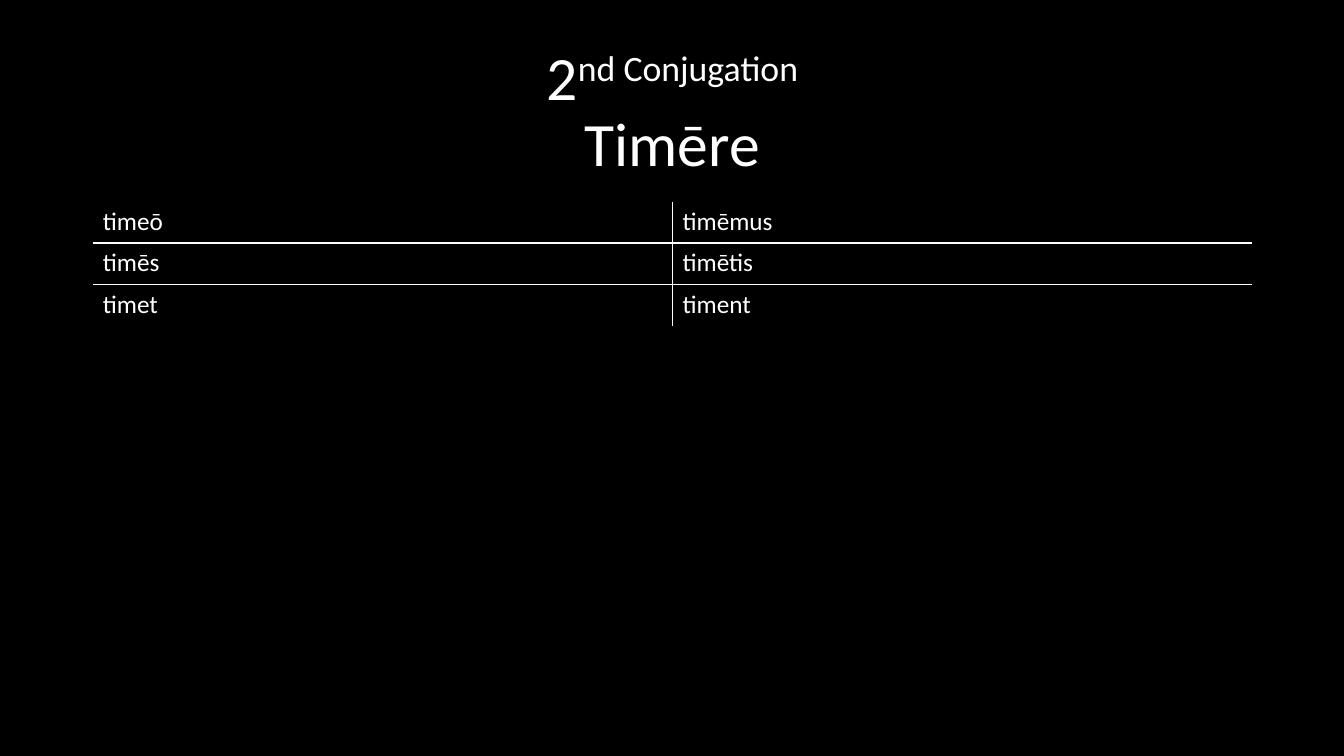
import pptx
import pptx.dml.color
import pptx.enum.text
import pptx.oxml
import pptx.oxml.ns
import pptx.util
from lxml import etree

Inches = pptx.util.Inches
Pt = pptx.util.Pt
qn = pptx.oxml.ns.qn

theme = {"back": "000000", "ink": "FFFFFF", "font": "Calibri",
         "title": 44, "body": 18, "rule": 1}
PLAIN = "{2D5ABB26-0587-4C30-8999-92F81FD0307C}"
left, width = Inches(0.92), Inches(11.5)


def style(run, size):
    look = {"name": theme["font"], "size": Pt(size)}
    for key, value in look.items():
        setattr(run.font, key, value)
    run.font.color.rgb = pptx.dml.color.RGBColor.from_string(theme["ink"])


def edge(cell, side):
    """Draw a rule on one side of a cell: L, R, T or B."""
    line = etree.SubElement(cell._tc.get_or_add_tcPr(), qn("a:ln" + side),
                            w=str(Pt(theme["rule"])))
    fill = etree.SubElement(line, qn("a:solidFill"))
    etree.SubElement(fill, qn("a:srgbClr"), val=theme["ink"])


deck = pptx.Presentation()
deck.slide_width, deck.slide_height = Inches(13.33), Inches(7.5)
slide = deck.slides.add_slide(deck.slide_layouts[6])
back = slide.background.fill
back.solid()
back.fore_color.rgb = pptx.dml.color.RGBColor.from_string(theme["back"])

# Title
frame = slide.shapes.add_textbox(left, Inches(0.4), width, Inches(1.45)).text_frame
frame.word_wrap = True
frame.vertical_anchor = pptx.enum.text.MSO_ANCHOR.MIDDLE
para = frame.paragraphs[0]
para.alignment = pptx.enum.text.PP_ALIGN.CENTER
para.line_spacing = 0.9
for text, raised in (("2", False), ("nd Conjugation", True), ("Timēre", False)):
    run = para.add_run()
    run.text = text
    style(run, theme["title"])
    if raised:
        run._r.get_or_add_rPr().set("baseline", "30000")
        para.add_line_break()

# Verb forms: singular, plural
forms = [("timeō", "timēmus"), ("timēs", "timētis"), ("timet", "timent")]
high = Inches(0.41)
shape = slide.shapes.add_table(len(forms), 2, left, Inches(2), width, high * len(forms))
grid = shape.table
grid.first_row = grid.horz_banding = False
grid._tbl.tblPr.find(qn("a:tableStyleId")).text = PLAIN
for row, pair in enumerate(forms):
    grid.rows[row].height = high
    for col, form in enumerate(pair):
        cell = grid.cell(row, col)
        run = cell.text_frame.paragraphs[0].add_run()
        run.text = form
        style(run, theme["body"])
        edge(cell, "RL"[col])
        if row > 0:
            edge(cell, "T")
        if row < len(forms) - 1:
            edge(cell, "B")
        cell.fill.background()

deck.save("out.pptx")
